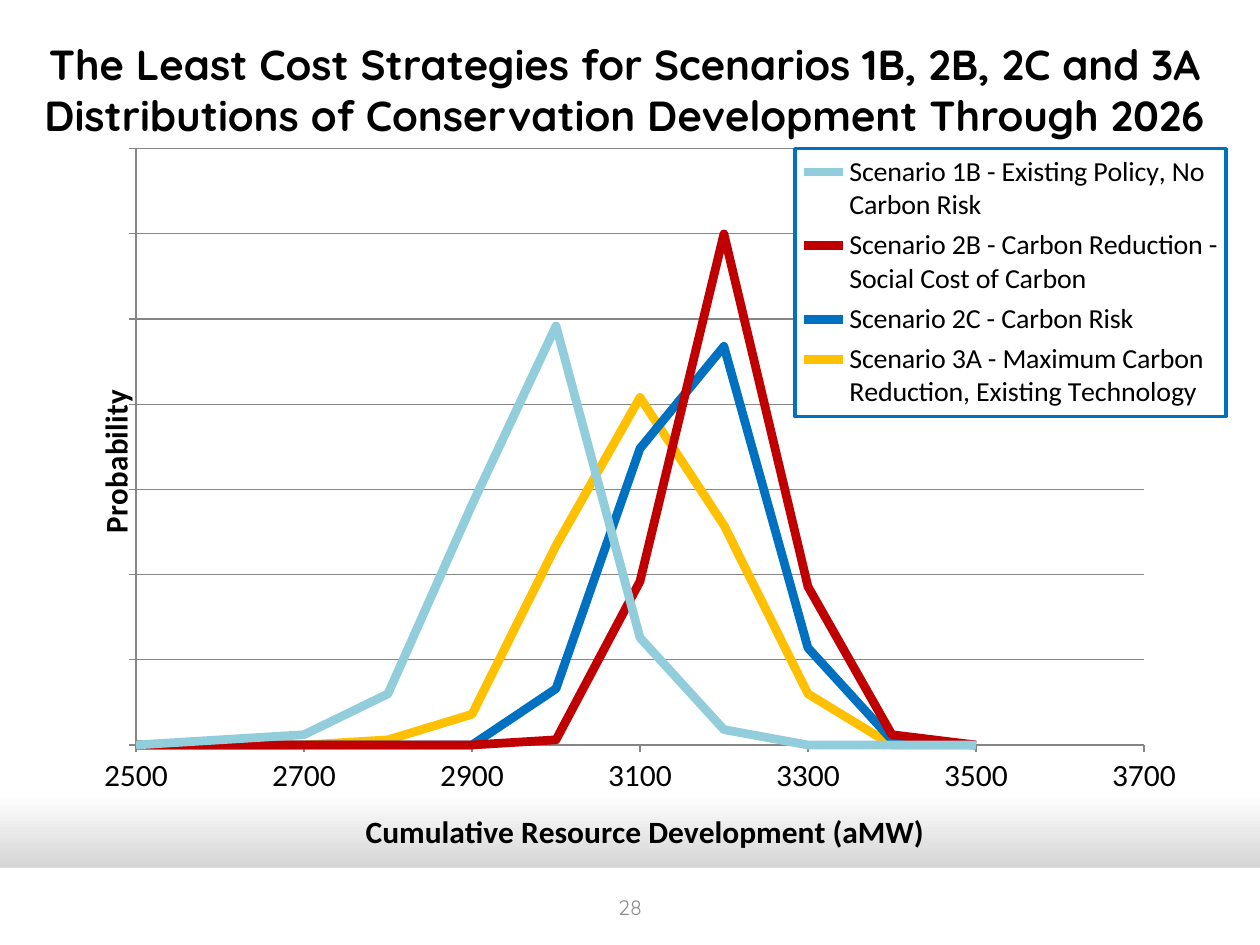
from lxml.etree import SubElement
from pptx import Presentation
from pptx.chart.data import XyChartData
from pptx.dml.color import RGBColor
from pptx.enum.chart import XL_CHART_TYPE, XL_LEGEND_POSITION, XL_TICK_LABEL_POSITION, XL_TICK_MARK
from pptx.enum.shapes import MSO_SHAPE
from pptx.enum.text import MSO_ANCHOR, MSO_AUTO_SIZE, PP_ALIGN
from pptx.oxml import parse_xml
from pptx.oxml.ns import nsdecls, qn
from pptx.util import Emu, Pt

PX = 914400 / 126
CHART_BOX = (63, 147, 1166, 714)
DEVELOPMENT = range(2500, 3501, 100)
SCENARIOS = [
    ("Scenario 1B - Existing Policy, No Carbon Risk", "92CDDC",
     [0, 1, 2, 10, 47, 82, 21, 3, 0, 0, 0]),
    ("Scenario 2B - Carbon Reduction - Social Cost of Carbon", "C00000",
     [0, 0, 0, 0, 0, 1, 32, 100, 31, 2, 0]),
    ("Scenario 2C - Carbon Risk", "0070C0",
     [0, 0, 0, 0, 0, 11, 58, 78, 19, 1, 0]),
    ("Scenario 3A - Maximum Carbon Reduction, Existing Technology", "FFC000",
     [0, 0, 0, 1, 6, 39, 68, 43, 10, 0, 0]),
]


def rgb(color):
    return RGBColor.from_string(color)


def emu(*lengths):
    return [Emu(round(length * PX)) for length in lengths]


def style_font(font, name, size, color, bold=False):
    font.name, font.size, font.bold = name, Pt(size), bold
    font.color.rgb = rgb(color)


def place(element, x, y, w=None, h=None, inner=False):
    """Fix a chart part at px offsets from the chart's corner."""
    for layout in element.findall(qn("c:layout")):
        element.remove(layout)
    layout = parse_xml(f"<c:layout {nsdecls('c')}><c:manualLayout/></c:layout>")
    values = [("layoutTarget", "inner")] if inner else []
    values += [("xMode", "edge"), ("yMode", "edge"),
               ("x", x / CHART_BOX[2]), ("y", y / CHART_BOX[3])]
    if w:
        values += [("w", w / CHART_BOX[2]), ("h", h / CHART_BOX[3])]
    for tag, value in values:
        SubElement(layout[0], qn(f"c:{tag}")).set("val", str(value))
    overlay = element.find(qn("c:overlay"))
    if overlay is None:
        element.insert(0, layout)
    else:
        overlay.addprevious(layout)


class SlideBuilder:
    heading_font = "Quicksand"
    chart_font = "Calibri"
    ink = "000000"
    grid = "868686"

    def __init__(self, slide):
        self.slide = slide

    def background(self, stops):
        fill = self.slide.background.fill
        fill.gradient()
        fill.gradient_angle = 270
        for stop, (position, color) in zip(fill.gradient_stops, stops):
            stop.position = position
            stop.color.rgb = rgb(color)

    def band(self, box, color):
        band = self.slide.shapes.add_shape(MSO_SHAPE.RECTANGLE, *emu(*box))
        band.shadow.inherit = False
        band.fill.solid()
        band.fill.fore_color.rgb = rgb(color)
        band.line.fill.background()

    def centred_text(self, shape, text, size, color, bold=False):
        frame = shape.text_frame
        frame.text = text
        frame.word_wrap = True
        frame.auto_size = MSO_AUTO_SIZE.NONE
        frame.vertical_anchor = MSO_ANCHOR.MIDDLE
        paragraph = frame.paragraphs[0]
        paragraph.alignment = PP_ALIGN.CENTER
        for run in paragraph.runs:
            style_font(run.font, self.heading_font, size, color, bold)

    def title(self, text, box):
        title = self.slide.shapes.title
        title.left, title.top, title.width, title.height = emu(*box)
        self.centred_text(title, text, 24, self.ink, bold=True)

    def page_number(self, text, box):
        number = self.slide.shapes.add_textbox(*emu(*box))
        self.centred_text(number, text, 12, "8C8C8C")

    def axis(self, axis, title, offset, low, high, step):
        axis.minimum_scale, axis.maximum_scale, axis.major_unit = low, high, step
        axis.major_tick_mark = XL_TICK_MARK.OUTSIDE
        axis.minor_tick_mark = XL_TICK_MARK.NONE
        axis.format.line.color.rgb = rgb(self.grid)
        axis.axis_title.text_frame.text = title
        run = axis.axis_title.text_frame.paragraphs[0].runs[0]
        style_font(run.font, self.chart_font, 18, self.ink, bold=True)
        place(axis.axis_title._element, *offset)

    def legend(self, chart, box):
        chart.has_legend = True
        legend = chart.legend
        legend.position = XL_LEGEND_POSITION.BOTTOM
        legend.include_in_layout = False
        style_font(legend.font, self.chart_font, 16, self.ink)
        place(legend._element, *box)
        frame = parse_xml(
            f'<c:spPr {nsdecls("c", "a")}>'
            '<a:solidFill><a:srgbClr val="FFFFFF"/></a:solidFill>'
            '<a:ln w="25400"><a:solidFill><a:srgbClr val="0070C0"/></a:solidFill></a:ln>'
            '</c:spPr>')
        legend._element.find(qn("c:overlay")).addnext(frame)

    def distributions(self, scenarios, box):
        data = XyChartData()
        for name, _, probabilities in scenarios:
            series = data.add_series(name)
            for development, probability in zip(DEVELOPMENT, probabilities):
                series.add_data_point(development, probability)
        chart = self.slide.shapes.add_chart(
            XL_CHART_TYPE.XY_SCATTER_SMOOTH_NO_MARKERS, *emu(*box), data).chart
        chart.has_title = False
        style_font(chart.font, self.chart_font, 18, self.ink)
        chart.plots[0].vary_by_categories = False
        for series, (_, color, _) in zip(chart.plots[0].series, scenarios):
            series.format.line.color.rgb = rgb(color)
            series.format.line.width = Pt(5)
        place(chart._chartSpace.find(".//" + qn("c:plotArea")),
              73, 1, 1008, 608, inner=True)

        development, probability = chart.category_axis, chart.value_axis
        self.axis(development, "Cumulative Resource Development (aMW)",
                  (297, 670), 2500, 3700, 200)
        development.has_major_gridlines = False
        development.tick_labels.number_format = "0"
        development.tick_labels.number_format_is_linked = False
        self.axis(probability, "Probability", (25, 244), 0, 116.69, 16.67)
        probability.has_major_gridlines = True
        probability.major_gridlines.format.line.color.rgb = rgb(self.grid)
        probability.tick_label_position = XL_TICK_LABEL_POSITION.NONE
        self.legend(chart, (732, 1, 431, 273))


def main():
    deck = Presentation()
    deck.slide_width, deck.slide_height = emu(1260, 945)
    builder = SlideBuilder(deck.slides.add_slide(deck.slide_layouts[5]))
    builder.background([(0.84, "FFFFFF"), (1, "A6A6A6")])
    builder.band((0, 868, 1260, 77), "FFFFFF")
    builder.title("The Least Cost Strategies for Scenarios 1B, 2B, 2C and 3A\v"
                  "Distributions of Conservation Development Through 2026",
                  (21, 21, 1207, 136))
    builder.distributions(SCENARIOS, CHART_BOX)
    builder.page_number("28", (483, 882, 294, 50))
    deck.save("out.pptx")


if __name__ == "__main__":
    main()
